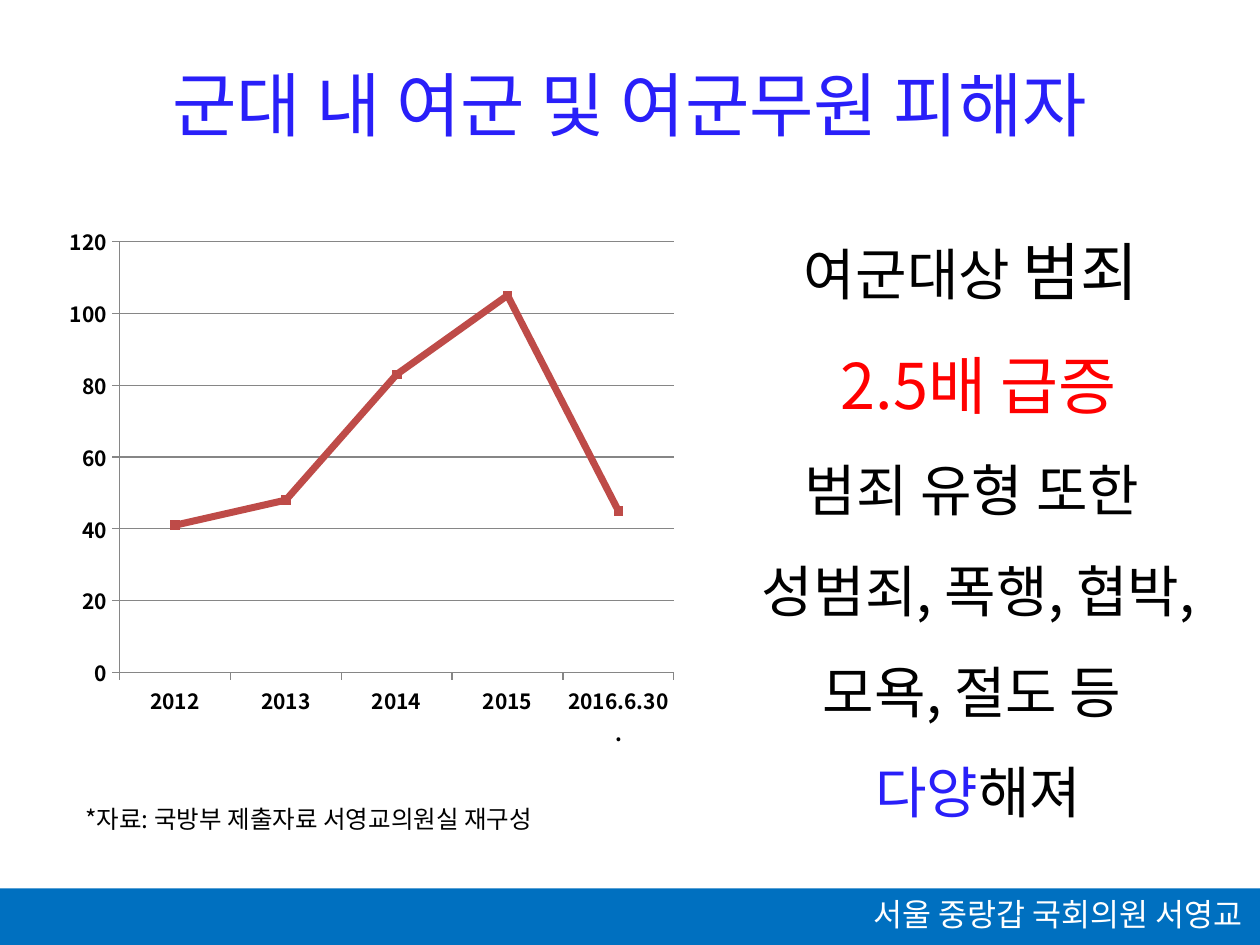
from lxml import etree
from pptx import Presentation
from pptx import util as u
from pptx.chart.data import CategoryChartData
from pptx.dml.color import RGBColor
from pptx.enum import chart as charts, shapes, text
from pptx.oxml.ns import qn

FONT = "Noto Sans CJK KR"
COLORS = {"black": "000000", "white": "FFFFFF", "blue": "291FF9",
          "red": "FF0000", "bar": "0070C0", "line": "BE4B48", "grid": "868686"}
ALIGN = text.PP_ALIGN


def color(name):
    return RGBColor.from_string(COLORS[name])


def add_text(slide, box, paragraphs, align=ALIGN.LEFT, spacing=1.0, wrap=True):
    """Each paragraph is a list of (words, size, colour name) runs."""
    frame = slide.shapes.add_textbox(*map(u.Cm, box)).text_frame
    frame.word_wrap = wrap
    for index, runs in enumerate(paragraphs):
        paragraph = frame.paragraphs[0] if index == 0 else frame.add_paragraph()
        paragraph.alignment = align
        paragraph.line_spacing = spacing
        for words, size, color_name in runs:
            run = paragraph.add_run()
            run.text = words
            run.font.size = u.Pt(size)
            run.font.name = FONT
            run.font.color.rgb = color(color_name)
            east_asian = etree.SubElement(run.font._element, qn("a:ea"))
            east_asian.set("typeface", FONT)


def add_title(slide, box):
    add_text(slide, box, [[("군대 내 여군 및 여군무원 피해자", 40, "blue")]],
             ALIGN.CENTER, wrap=False)


def add_footer(slide, box):
    left, top, width, height = box
    bar = slide.shapes.add_shape(shapes.MSO_SHAPE.RECTANGLE, *map(u.Cm, box))
    bar.shadow.inherit = False
    bar.fill.solid()
    bar.fill.fore_color.rgb = color("bar")
    bar.line.fill.background()
    add_text(slide, (left + width - 10.11, top, 10, height),
             [[("서울 중랑갑 국회의원 서영교", 18, "white")]], ALIGN.RIGHT)


def set_plot_layout(chart, **fractions):
    plot_area = chart._chartSpace.chart.plotArea
    for old in plot_area.findall(qn("c:layout")):
        plot_area.remove(old)
    layout = etree.Element(qn("c:layout"))
    plot_area.insert(0, layout)
    manual = etree.SubElement(layout, qn("c:manualLayout"))
    settings = {"layoutTarget": "inner", "xMode": "edge", "yMode": "edge", **fractions}
    for tag, value in settings.items():
        etree.SubElement(manual, qn(f"c:{tag}")).set("val", str(value))


def add_victim_chart(slide, box):
    data = CategoryChartData()
    data.categories = ["2012", "2013", "2014", "2015", "2016.6.30."]
    data.add_series("Series 1", [41, 48, 83, 105, 45])
    chart = slide.shapes.add_chart(charts.XL_CHART_TYPE.LINE_MARKERS,
                                   *map(u.Cm, box), data).chart
    chart.has_legend = False
    chart.has_title = False
    chart.font.name = FONT
    chart.font.size = u.Pt(12)
    chart.font.bold = True
    chart.font.color.rgb = color("black")
    set_plot_layout(chart, x=0.1, y=0.05, w=0.88, h=0.79)

    # Axes
    values = chart.value_axis
    values.minimum_scale, values.maximum_scale, values.major_unit = 0, 120, 20
    values.has_major_gridlines = True
    for axis in (values, chart.category_axis):
        axis.major_tick_mark = charts.XL_TICK_MARK.OUTSIDE
    for line in (values.format.line, chart.category_axis.format.line,
                 values.major_gridlines.format.line):
        line.color.rgb = color("grid")
        line.width = u.Pt(0.75)

    # Series
    chart.plots[0].vary_by_categories = False
    series = chart.plots[0].series[0]
    series.smooth = False
    series.format.line.color.rgb = color("line")
    series.format.line.width = u.Pt(4)
    marker = series.marker
    marker.style = charts.XL_MARKER_STYLE.SQUARE
    marker.size = 5
    marker.format.fill.solid()
    marker.format.fill.fore_color.rgb = color("line")
    marker.format.line.color.rgb = color("line")


def add_source(slide, box):
    add_text(slide, box, [[("*자료: 국방부 제출자료 서영교의원실 재구성", 14, "black")]])


def add_message(slide, box):
    add_text(slide, box, [
        [("여군대상 ", 32, "black"), ("범죄 ", 36, "black")],
        [("2.5배 급증", 36, "red")],
        [("범죄 유형 또한 ", 32, "black")],
        [("성범죄, 폭행, 협박, 모욕, 절도 등 ", 32, "black")],
        [("다양", 32, "blue"), ("해져", 32, "black")],
    ], ALIGN.CENTER, spacing=1.5)


def main():
    presentation = Presentation()
    presentation.slide_width, presentation.slide_height = u.Cm(25.4), u.Cm(19.05)
    slide = presentation.slides.add_slide(presentation.slide_layouts[6])
    add_title(slide, (2.08, 1.12, 21.23, 1.93))
    add_footer(slide, (0, 17.91, 25.4, 1.14))
    add_victim_chart(slide, (1.14, 4.32, 12.7, 11))
    add_source(slide, (1.47, 16.08, 12, 0.81))
    add_message(slide, (14.53, 3.81, 10.39, 13.97))
    presentation.save("out.pptx")


if __name__ == "__main__":
    main()
